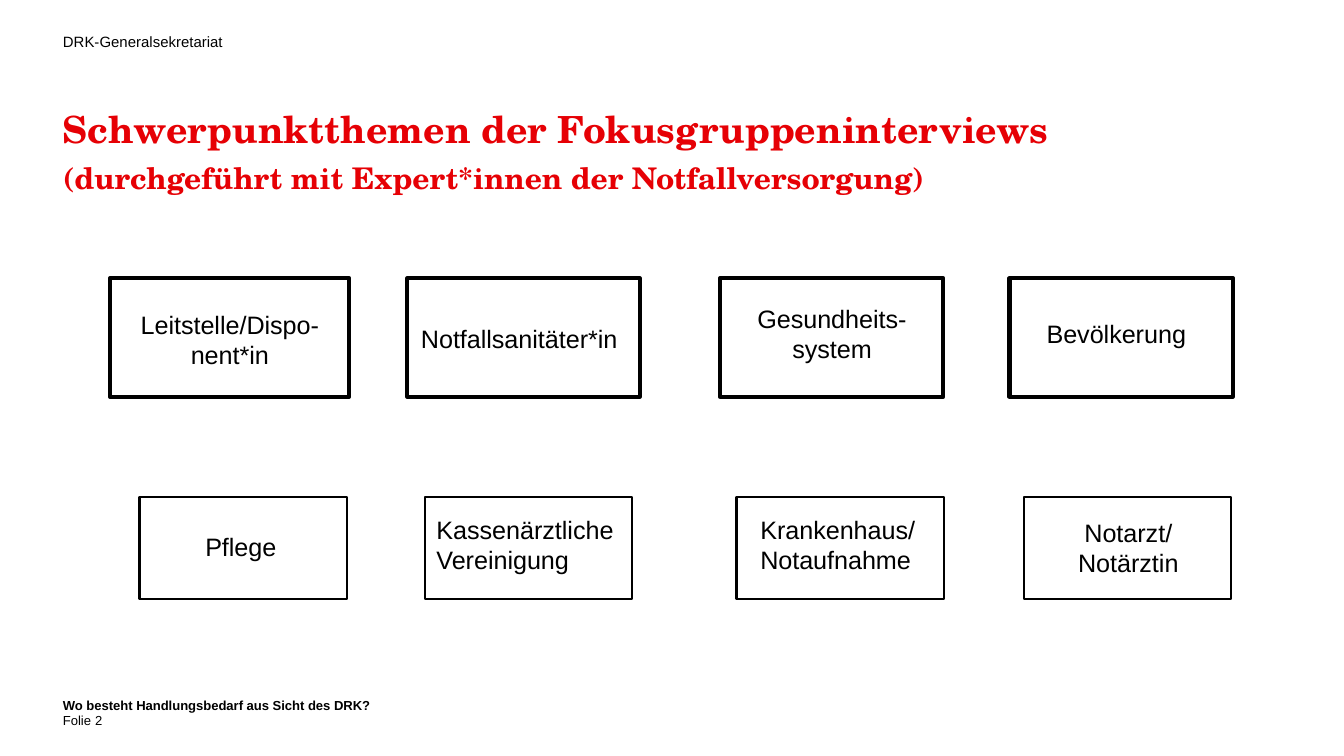
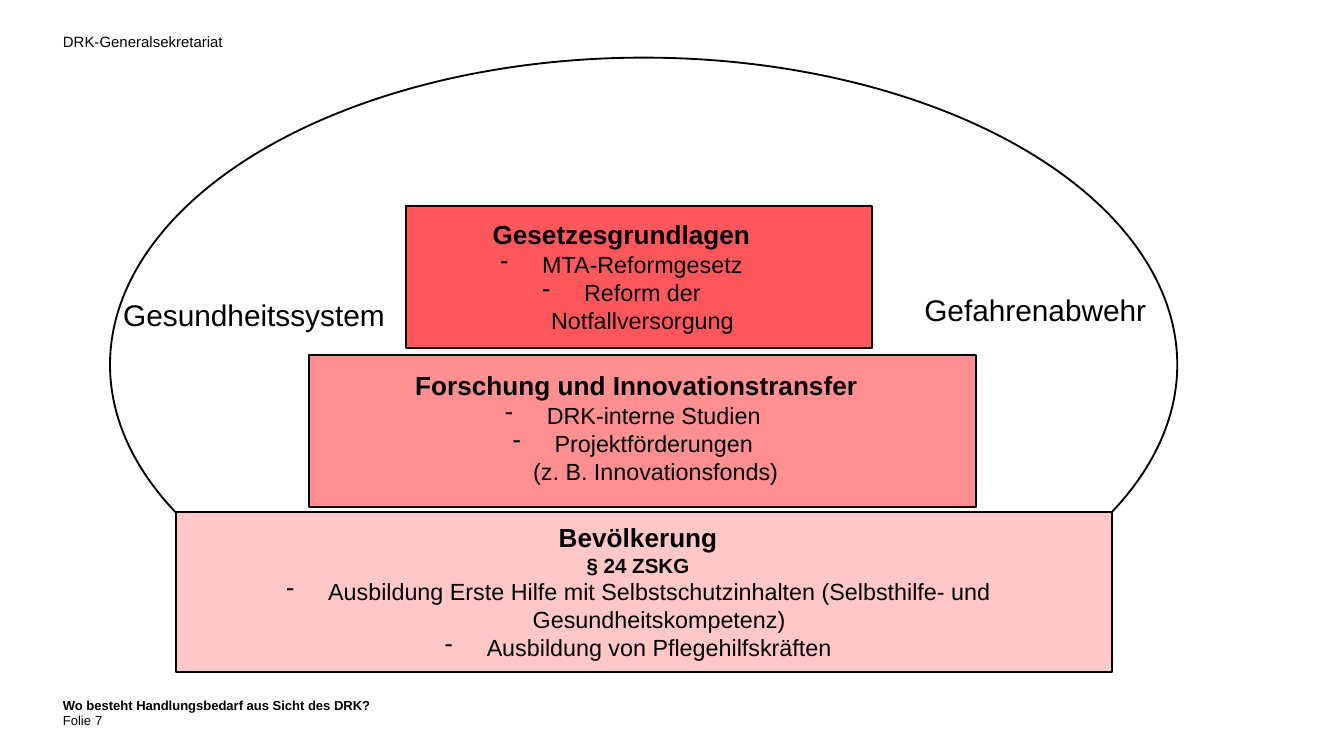
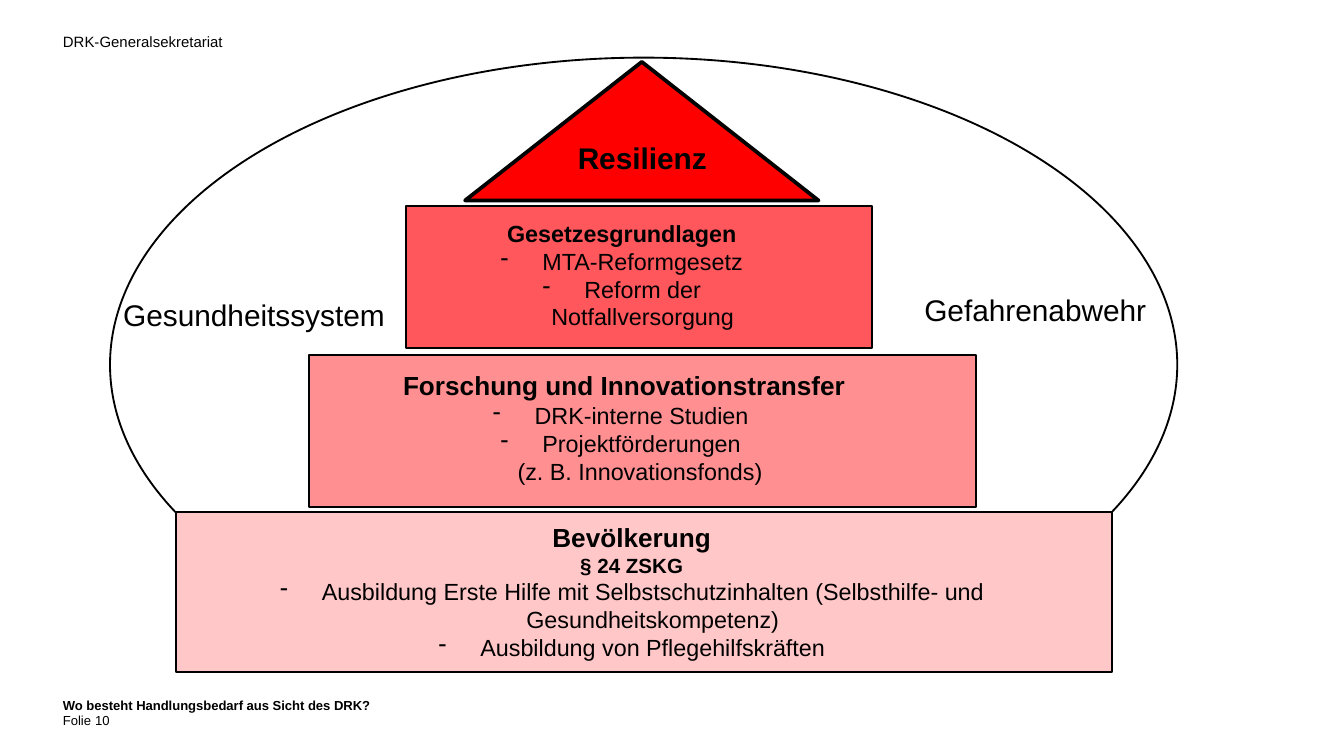
from pptx import Presentation
from pptx.dml.color import RGBColor
from pptx.enum.shapes import MSO_SHAPE
from pptx.enum.text import MSO_ANCHOR, PP_ALIGN
from pptx.oxml.ns import qn
from pptx.util import Cm, Pt
from lxml import etree

RECT = MSO_SHAPE.RECTANGLE
DOME = MSO_SHAPE.FLOWCHART_CONNECTOR
PEAK = MSO_SHAPE.FLOWCHART_EXTRACT
TOP, BOTTOM = MSO_ANCHOR.TOP, MSO_ANCHOR.BOTTOM
LEFT, CENTER = PP_ALIGN.LEFT, PP_ALIGN.CENTER

BLACK, RED, SIGNAL = "000000", "E60005", "FF0000"
DARK, MEDIUM, LIGHT = "FF575B", "FF8F91", "FFC7C8"
MARGIN = 1.19
BULLET_INDENT = 0.79

# Text formats
FORMATS = {
    "brand": {"size": Pt(8)},
    "footer": {"size": Pt(7)},
    "footer_bold": {"size": Pt(7), "bold": True},
    "title": {"size": Pt(20), "bold": True, "name": "TeX Gyre Schola"},
    "subtitle": {"size": Pt(16), "bold": True, "name": "TeX Gyre Schola"},
    "topic": {"size": Pt(13.5)},
    "label": {"size": Pt(16)},
    "peak": {"size": Pt(16), "bold": True},
    "head": {"size": Pt(14), "bold": True},
    "small_head": {"size": Pt(12.5), "bold": True},
    "law": {"size": Pt(11), "bold": True},
    "item": {"size": Pt(12.5)},
}


def rgb(value):
    return RGBColor.from_string(value)


class Deck:
    def __init__(self):
        self.prs = Presentation()
        self.prs.slide_width, self.prs.slide_height = Cm(25.4), Cm(14.29)
        self.slide = None

    def new_slide(self, number):
        """Start a slide with the shared header and footer."""
        self.slide = self.prs.slides.add_slide(self.prs.slide_layouts[6])
        self.plain((MARGIN, 0.61, 4.55, 0.33), "DRK-Generalsekretariat", "brand", 10)
        self.plain((MARGIN, 13.16, 23.01, 0.23),
                   "Wo besteht Handlungsbedarf aus Sicht des DRK?", "footer_bold", 9)
        self.plain((MARGIN, 13.44, 0.76, 0.33), "Folie", "footer", 9, BOTTOM)
        self.plain((1.8, 13.46, 5.72, 0.3), str(number), "footer", 9, BOTTOM)

    def run(self, p, text, style, color=BLACK):
        r = p.add_run()
        r.text = text
        r.font.color.rgb = rgb(color)
        for key, value in {"name": "Arial", **FORMATS[style]}.items():
            setattr(r.font, key, value)

    def frame(self, at):
        tf = self.slide.shapes.add_textbox(*map(Cm, at)).text_frame
        tf.word_wrap = True
        return tf

    def plain(self, at, text, style, spacing, anchor=TOP):
        """Text without insets and with fixed line spacing."""
        tf = self.frame(at)
        tf.margin_left = tf.margin_right = tf.margin_top = tf.margin_bottom = 0
        tf.vertical_anchor = anchor
        p = tf.paragraphs[0]
        p.line_spacing = Pt(spacing)
        if text:
            self.run(p, text, style)
        return p

    def title(self, text, subtitle):
        p = self.plain((MARGIN, 2.01, 20.47, 1.63), "", "title", 24)
        self.run(p, text, "title", RED)
        p.add_line_break()
        self.run(p, subtitle, "subtitle", RED)

    def label(self, at, text, style="label", align=LEFT):
        p = self.frame(at).paragraphs[0]
        p.alignment = align
        self.run(p, text, style)

    def shape(self, kind, at, fill=None, line=None):
        s = self.slide.shapes.add_shape(kind, *map(Cm, at))
        s.shadow.inherit = False
        if fill:
            s.fill.solid()
            s.fill.fore_color.rgb = rgb(fill)
        else:
            s.fill.background()
        if line:
            s.line.color.rgb = rgb(BLACK)
            s.line.width = Pt(line)
        else:
            s.line.fill.background()
        return s

    def panel(self, at, fill, lines):
        """Filled text panel; lines are (text, style, indent), None for a bullet."""
        tf = self.shape(RECT, at, fill).text_frame
        tf.word_wrap = True
        tf.vertical_anchor = TOP
        for i, (text, style, indent) in enumerate(lines):
            p = tf.add_paragraph() if i else tf.paragraphs[0]
            p.alignment = CENTER
            self.indent(p, indent)
            self.run(p, text, style)

    def indent(self, p, indent):
        pPr = p._p.get_or_add_pPr()
        pPr.set("marL", str(Cm(BULLET_INDENT if indent is None else indent)))
        pPr.set("indent", str(-Cm(BULLET_INDENT) if indent is None else 0))
        if indent is None:
            etree.SubElement(pPr, qn("a:buChar")).set("char", "-")


def topics(deck):
    deck.new_slide(2)
    deck.title("Schwerpunktthemen der Fokusgruppeninterviews",
               "(durchgeführt mit Expert*innen der Notfallversorgung)")

    # Rows: top, height, line width, then box left/width and label place
    rows = [
        (5.26, 2.24, 2.25, [
            (2.08, 4.52, (2.34, 5.72, 4.01, 1.42), "Leitstelle/Dispo-nent*in", CENTER),
            (7.7, 4.39, (7.62, 5.99, 4.39, 0.84), "Notfallsanitäter*in", CENTER),
            (13.61, 4.22, (14.05, 5.61, 3.35, 1.42), "Gesundheits-system", CENTER),
            (19.08, 4.22, (19.53, 5.89, 3.35, 0.84), "Bevölkerung", LEFT),
        ]),
        (9.39, 1.93, 1.25, [
            (2.64, 3.92, (3.63, 9.91, 2.54, 0.84), "Pflege", LEFT),
            (8.03, 3.92, (8, 9.6, 3.96, 1.42), "Kassenärztliche Vereinigung", LEFT),
            (13.92, 3.92, (14.12, 9.6, 3.56, 1.42), "Krankenhaus/Notaufnahme", LEFT),
            (19.35, 3.92, (19.46, 9.65, 3.73, 1.42), "Notarzt/Notärztin", CENTER),
        ]),
    ]
    for top, height, line, boxes in rows:
        for left, width, place, text, align in boxes:
            deck.shape(RECT, (left, top, width, height), line=line)
            deck.label(place, text, "topic", align)


def pyramid(deck, number, law_panel, law_head, research_left, research_indent,
            people_left):
    deck.new_slide(number)

    # Dome with its two sides
    deck.shape(DOME, (2.08, 1.09, 20.17, 11.61), line=1)
    deck.label((2.08, 5.49, 5.66, 0.94), "Gesundheitssystem")
    deck.label((17.22, 5.38, 5.11, 0.94), "Gefahrenabwehr")

    # Steps: outlined block, text panel, colour, lines
    steps = [
        ((3.33, 9.68, 17.68, 3.02), (people_left, 9.73, 16, 2.92), LIGHT, [
            ("Bevölkerung", "head", 0),
            ("§ 24 ZSKG", "law", 0),
            ("Ausbildung Erste Hilfe mit Selbstschutzinhalten "
             "(Selbsthilfe- und Gesundheitskompetenz)", "item", None),
            ("Ausbildung von Pflegehilfskräften", "item", None),
        ]),
        ((5.84, 6.71, 12.6, 2.87), (research_left, 6.86, 9.14, 2.49), MEDIUM, [
            ("Forschung und Innovationstransfer", "head", 0.14),
            ("DRK-interne Studien", "item", None),
            ("Projektförderungen", "item", None),
            ("(z. B. Innovationsfonds)", "item", research_indent),
        ]),
        ((7.67, 3.89, 8.81, 2.69), law_panel, DARK, [
            ("Gesetzesgrundlagen", law_head, 0),
            ("MTA-Reformgesetz", "item", None),
            ("Reform der Notfallversorgung", "item", None),
        ]),
    ]
    for block, place, color, lines in steps:
        deck.shape(RECT, block, color, 1)
        deck.panel(place, color, lines)


def main():
    deck = Deck()
    topics(deck)
    pyramid(deck, 7, (8.61, 4.01, 6.27, 2.46), "head", 7.39, 0.86, 4.06)
    pyramid(deck, 10, (8.79, 4.01, 5.92, 2.39), "small_head", 7.16, 0.73, 3.94)

    # Peak of the finished pyramid
    deck.shape(PEAK, (8.79, 1.17, 6.68, 2.62), SIGNAL, 2)
    deck.panel((10.59, 2.51, 3.1, 0.94), SIGNAL, [("Resilienz", "peak", 0)])
    deck.prs.save("out.pptx")


if __name__ == "__main__":
    main()
